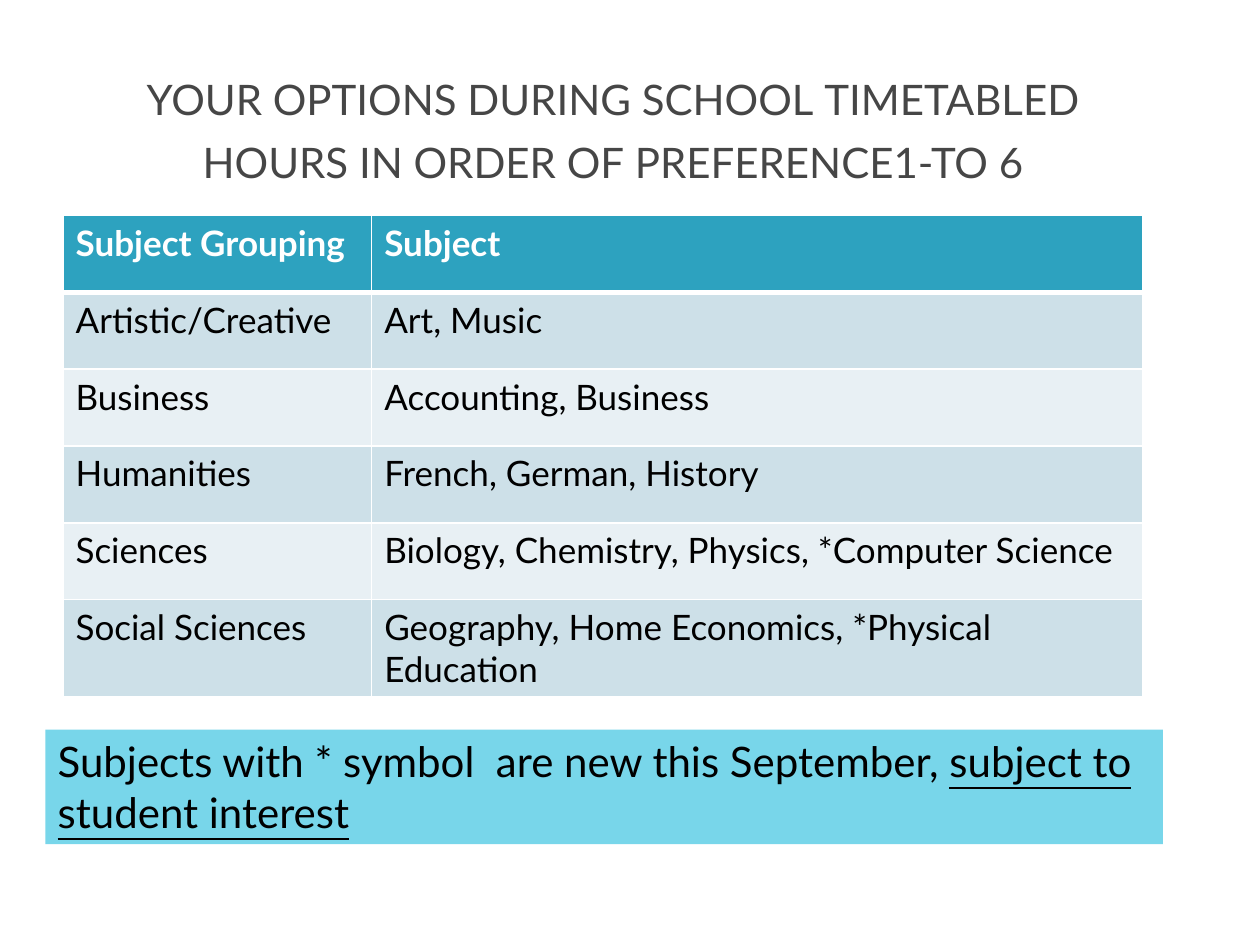
from dataclasses import dataclass

from lxml.etree import SubElement
from pptx import Presentation
from pptx.dml.color import RGBColor as RGB
from pptx.enum.shapes import MSO_SHAPE as Shape
from pptx.enum.text import MSO_ANCHOR as Anchor, MSO_AUTO_SIZE as AutoSize, PP_ALIGN as Align
from pptx.oxml.ns import qn
from pptx.util import Inches, Pt


@dataclass(frozen=True)
class Theme:
    font: str = "Lato"
    title_size: int = 30
    table_size: int = 20
    note_size: int = 24
    title: str = "464646"
    text: str = "000000"
    white: str = "FFFFFF"
    header: str = "2DA2BF"
    bands: tuple = ("CDE0E8", "E8F0F4")
    note: str = "78D6EA"
    rule: float = 1
    header_rule: float = 3


class SlideBuilder:
    def __init__(self, slide, theme):
        self.slide = slide
        self.theme = theme

    def run(self, paragraph, text, size, color, bold=False, underline=False):
        run = paragraph.add_run()
        run.text = text
        font = run.font
        font.name, font.size = self.theme.font, Pt(size)
        font.bold, font.underline = bold, underline
        font.color.rgb = RGB.from_string(color)
        return run

    def title(self, text, left, top, width, height):
        heading = self.slide.shapes.title
        heading.left, heading.top = Inches(left), Inches(top)
        heading.width, heading.height = Inches(width), Inches(height)
        frame = heading.text_frame
        frame.word_wrap = True
        frame.auto_size = AutoSize.NONE
        frame.vertical_anchor = Anchor.BOTTOM
        paragraph = frame.paragraphs[0]
        paragraph.alignment = Align.CENTER
        run = self.run(paragraph, text, self.theme.title_size, self.theme.title)
        run.font._element.set("cap", "small")

    def border(self, cell, side, width):
        properties = cell._tc.get_or_add_tcPr()
        line = SubElement(properties, qn(f"a:ln{side}"), w=str(Pt(width)))
        fill = SubElement(line, qn("a:solidFill"))
        SubElement(fill, qn("a:srgbClr"), val=self.theme.white)

    def cell(self, cell, text, row):
        theme = self.theme
        is_header = row == 0
        widths = {
            "L": theme.rule,
            "R": theme.rule,
            "T": theme.header_rule if row == 1 else theme.rule,
            "B": theme.header_rule if is_header else theme.rule,
        }
        for side, width in widths.items():
            self.border(cell, side, width)
        cell.fill.solid()
        background = theme.header if is_header else theme.bands[(row - 1) % 2]
        cell.fill.fore_color.rgb = RGB.from_string(background)
        color = theme.white if is_header else theme.text
        self.run(cell.text_frame.paragraphs[0], text, theme.table_size, color, bold=is_header)

    def table(self, rows, left, top, column_widths, row_height):
        table = self.slide.shapes.add_table(
            len(rows), len(column_widths), Inches(left), Inches(top),
            Inches(sum(column_widths)), Inches(row_height * len(rows)),
        ).table
        table.horz_banding = False
        for column, width in zip(table.columns, column_widths):
            column.width = Inches(width)
        for row, texts in enumerate(rows):
            table.rows[row].height = Inches(row_height)
            for column, text in enumerate(texts):
                self.cell(table.cell(row, column), text, row)

    def note(self, parts, left, top, width, height):
        panel = self.slide.shapes.add_shape(
            Shape.RECTANGLE, Inches(left), Inches(top), Inches(width), Inches(height)
        )
        panel.shadow.inherit = False
        panel.fill.solid()
        panel.fill.fore_color.rgb = RGB.from_string(self.theme.note)
        panel.line.fill.background()
        frame = panel.text_frame
        frame.word_wrap = True
        frame.auto_size = AutoSize.SHAPE_TO_FIT_TEXT
        frame.vertical_anchor = Anchor.TOP
        paragraph = frame.paragraphs[0]
        paragraph.alignment = Align.LEFT
        for text, underline in parts:
            self.run(paragraph, text, self.theme.note_size, self.theme.text, underline=underline)


SUBJECT_ROWS = [
    ("Subject Grouping", "Subject"),
    ("Artistic/Creative", "Art, Music"),
    ("Business", "Accounting, Business"),
    ("Humanities", "French, German, History"),
    ("Sciences", "Biology, Chemistry, Physics, *Computer Science"),
    ("Social Sciences", "Geography, Home Economics, *Physical Education"),
]

NEW_SUBJECTS_NOTE = [
    ("Subjects with * symbol  are new this September, ", False),
    ("subject to student interest", True),
]


def main():
    presentation = Presentation()
    presentation.slide_width, presentation.slide_height = Inches(10), Inches(7.5)
    title_only = presentation.slide_layouts[5]
    builder = SlideBuilder(presentation.slides.add_slide(title_only), Theme())
    builder.title(
        "your options during school timetabled hours in order of preference1-to 6",
        0.5, 0.3, 8.73, 1.25,
    )
    builder.table(SUBJECT_ROWS, 0.5, 1.71, (2.45, 6.12), 0.61)
    builder.note(NEW_SUBJECTS_NOTE, 0.36, 5.79, 8.87, 0.91)
    presentation.save("out.pptx")


if __name__ == "__main__":
    main()
